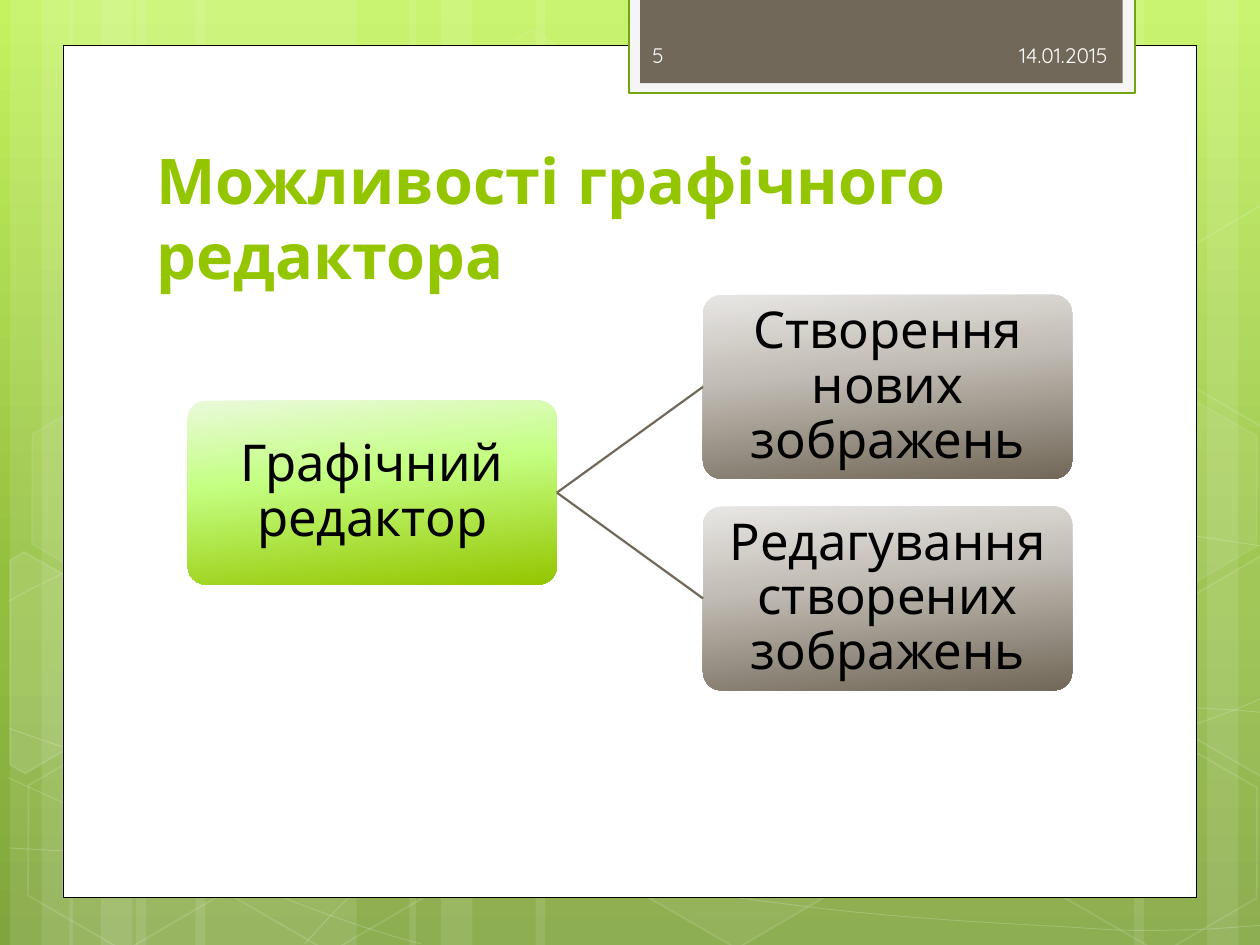
from lxml.etree import SubElement
from pptx import Presentation
from pptx.dml.color import RGBColor as RGB
from pptx.enum.shapes import MSO_CONNECTOR as Link, MSO_SHAPE as Shape
from pptx.enum.text import MSO_ANCHOR as Anchor, PP_ALIGN as Align
from pptx.oxml.ns import qn
from pptx.util import Inches, Pt

WIDE, HIGH = 10, 7.5
FONT = "Quicksand"
WHITE, BLACK = RGB(255, 255, 255), RGB(0, 0, 0)
LIME, GREEN = RGB(0x94, 0xC6, 0x00), RGB(0x74, 0xA5, 0x10)
BROWN, PALE = RGB(0x71, 0x68, 0x5A), RGB(0xF5, 0xF5, 0xF5)
LIGHT = RGB(0xFE, 0xFE, 0xFE)
BACK = [(0, RGB(0xC3, 0xF3, 0x5F)), (62, RGB(0x93, 0xBF, 0x3F)),
        (100, RGB(0x81, 0xA5, 0x3E))]
FRESH = [(0, RGB(0xEA, 0xF9, 0xDA)), (40, RGB(0xC4, 0xFF, 0x82)), (100, LIME)]
EARTH = [(0, RGB(0xE8, 0xE6, 0xE4)), (40, RGB(0xC2, 0xBD, 0xB5)),
         (100, RGB(0x72, 0x68, 0x59))]

TITLE = "Можливості графічного редактора"
ROOT = "Графічний редактор"
LEAVES = ["Створення нових зображень", "Редагування створених зображень"]
# text, left, width, alignment
MARKS = [("14.01.2015", 6.56, 2.33, Align.RIGHT), ("5", 5.08, 1.46, Align.LEFT)]

# left, width
STRIPES = [(1.08, 1.75), (0.08, 0.5), (0.33, 0.83), (1.55, 1.75), (0.55, 0.5),
           (0.8, 0.83), (7.33, 1.75), (9.58, 0.5), (9, 0.83), (4.25, 3.08),
           (3.25, 0.5), (3.5, 0.83)]
# start point, then Bezier triples
WAVES = [
    [(0.07, 6.73), (0.61, 6.76), (1.15, 6.79), (1.9, 6.78), (2.65, 6.77),
     (3.58, 6.75), (4.58, 6.65), (5.58, 6.55), (7, 6.36), (7.92, 6.17),
     (8.83, 5.98), (9.77, 5.68), (10.07, 5.51)],
    [(0.07, 4.77), (0.36, 4.61), (0.65, 4.46), (1.21, 4.31), (1.78, 4.16),
     (2.59, 3.94), (3.47, 3.87), (4.36, 3.8), (5.44, 3.79), (6.54, 3.87),
     (7.64, 3.95), (9.47, 4.26), (10.07, 4.34)],
    [(0.06, 6.17), (1.27, 6.72), (2.47, 7.27), (3.34, 7.49)],
    [(0.07, 5.78), (0.38, 5.89), (0.7, 6), (1.28, 6.16), (1.86, 6.31),
     (2.73, 6.56), (3.57, 6.73), (4.4, 6.9), (5.45, 7.08), (6.28, 7.18),
     (7.11, 7.29), (8, 7.33), (8.53, 7.36), (9.05, 7.4), (9.19, 7.38),
     (9.45, 7.38), (9.71, 7.37), (9.89, 7.35), (10.07, 7.34)],
    [(2.42, 7.49), (2.6, 7.29), (2.78, 7.09), (3.02, 6.91), (3.26, 6.73),
     (3.6, 6.53), (3.88, 6.39), (4.16, 6.25), (4.33, 6.19), (4.7, 6.09),
     (5.06, 5.99), (5.73, 5.85), (6.08, 5.78), (6.44, 5.71), (6.49, 5.71),
     (6.8, 5.69), (7.11, 5.66), (7.6, 5.63), (7.94, 5.62), (8.29, 5.61),
     (8.86, 5.62), (8.86, 5.62), (9.08, 5.62), (9.31, 5.62), (9.53, 5.62),
     (9.71, 5.63), (9.88, 5.64), (9.97, 5.65), (10.06, 5.66), (10.03, 5.65),
     (10.06, 5.66)],
]
# left, top, fill opacity, line opacity
CELLS = [(3.34, 0.36, 4, 8), (4.97, 5.89, 6, 12), (0.11, 5.91, 0, 12),
         (0.14, 3.12, 7, 8), (1.74, 5.92, 0, 12), (7.53, 4.53, 10, 12),
         (8.34, 5.93, 0, 12), (8.34, 3.14, 7, 8)]
# corners, fill opacity
SHARDS = [
    ([(0.08, 4.45), (0.19, 4.38), (0.96, 4.82), (0.95, 5.7), (0.2, 6.14),
      (0.08, 6.07)], 10),
    ([(9.26, 4.85), (10.01, 4.41), (10.09, 4.46), (10.09, 6.13),
      (10.02, 6.17), (9.26, 5.73)], 4),
    ([(9.26, 2.07), (10.01, 1.63), (10.1, 1.68), (10.09, 3.35),
      (10.02, 3.39), (9.26, 2.95)], 0),
]
# box, fill, line, line width
FRAMES = [((0.5, 0.36, 9, 6.76), WHITE, BLACK, 0.5),
          ((4.99, -0.02, 4.02, 0.76), PALE, GREEN, 1.25),
          ((5.08, -0.02, 3.83, 0.68), BROWN, None, 0)]

NODE_W, NODE_H, PAD = 2.93, 1.46, 0.04
COLS = (1.49, 5.58)
TOP, STEP = 2.34, 1.68

deck = Presentation()
deck.slide_width, deck.slide_height = Inches(WIDE), Inches(HIGH)
slide = deck.slides.add_slide(deck.slide_layouts[5])
shapes = slide.shapes


def veil(shape, alpha, edge, width=1):
    """Give a shape a white fill and line at opacities in percent; 0 is none."""
    shape.shadow.inherit = False
    shape.line.width = Pt(width)
    for fill, part in ((shape.fill, alpha), (shape.line.fill, edge)):
        if part:
            fill.solid()
            fill.fore_color.rgb = WHITE
        else:
            fill.background()
    tones = shape.element.spPr.iter(qn("a:srgbClr"))
    for tone, part in zip(tones, filter(None, (alpha, edge))):
        SubElement(tone, qn("a:alpha"), val=str(part * 1000))


def blend(fill, root, stops, angle):
    """Set gradient stops; the angle runs clockwise."""
    fill.gradient()
    fill.gradient_angle = 360 - angle
    ramp = next(root.iter(qn("a:gsLst")))
    for old in list(ramp):
        ramp.remove(old)
    for pos, tone in stops:
        stop = SubElement(ramp, qn("a:gs"), pos=str(pos * 1000))
        SubElement(stop, qn("a:srgbClr"), val=str(tone))


def add(kind, box):
    shape = shapes.add_shape(kind, *map(Inches, box))
    shape.shadow.inherit = False
    return shape


def trace(points, close):
    spots = [(Inches(x), Inches(y)) for x, y in points]
    pen = shapes.build_freeform(*spots[0])
    pen.add_line_segments(spots[1:], close=close)
    return pen.convert_to_shape()


def curve(points):
    """Draw a chain of cubic Bezier curves."""
    shape = trace(points, False)
    track = next(shape.element.iter(qn("a:path")))
    lines = track.findall(qn("a:lnTo"))
    for i in range(0, len(lines), 3):
        bend = SubElement(track, qn("a:cubicBezTo"))
        for line in lines[i:i + 3]:
            bend.append(line[0])
            track.remove(line)
    return shape


def write(shape, text, size, color, align, anchor, bold=False, inset=None):
    frame = shape.text_frame
    frame.word_wrap, frame.vertical_anchor = True, anchor
    if inset is not None:
        for side in ("left", "top", "right", "bottom"):
            setattr(frame, "margin_" + side, Inches(inset))
    line = frame.paragraphs[0]
    line.alignment = align
    run = line.add_run()
    run.text = text
    run.font.color.rgb = color
    for key, val in {"name": FONT, "size": Pt(size), "bold": bold}.items():
        setattr(run.font, key, val)
    return line


def node(text, col, row, stops):
    left, top = COLS[col], TOP + row * STEP
    box = add(Shape.ROUNDED_RECTANGLE, (left, top, NODE_W, NODE_H))
    box.adjustments[0] = 0.1
    box.line.fill.background()
    blend(box.fill, box.element, stops, 84)
    label = shapes.add_textbox(*map(Inches, (
        left + PAD, top + PAD, NODE_W - 2 * PAD, NODE_H - 2 * PAD)))
    line = write(label, text, 29, BLACK, Align.CENTER, Anchor.MIDDLE, inset=0.02)
    line.line_spacing = 0.9
    return box


blend(slide.background.fill, slide.element, BACK, 90)
for left, width in STRIPES:
    veil(add(Shape.RECTANGLE, (left, 0, width, HIGH)), 10, 0)
for wave in WAVES:
    veil(curve(wave), 0, 20, 0.5)
for left, top, alpha, edge in CELLS:
    cell = add(Shape.HEXAGON, (left, top, 1.75, 1.52))
    cell.rotation = 30
    cell.adjustments[0], cell.adjustments[1] = 0.285, 1.155
    veil(cell, alpha, edge)
for points, alpha in SHARDS:
    veil(trace(points, True), alpha, 12)

for box, tone, edge, width in FRAMES:
    panel = add(Shape.RECTANGLE, box)
    panel.fill.solid()
    panel.fill.fore_color.rgb = tone
    if edge is None:
        panel.line.fill.background()
    else:
        panel.line.color.rgb, panel.line.width = edge, Pt(width)

title = shapes.title
shapes.element.append(title.element)
for key, val in zip(("left", "top", "width", "height"), (1.14, 1.12, 7.68, 1.25)):
    setattr(title, key, Inches(val))
write(title, TITLE, 36, LIME, Align.LEFT, Anchor.BOTTOM, bold=True)

root = node(ROOT, 0, (len(LEAVES) - 1) / 2, FRESH)
for row, text in enumerate(LEAVES):
    leaf = node(text, 1, row, EARTH)
    link = shapes.add_connector(Link.STRAIGHT, 0, 0, 0, 0)
    link.begin_connect(root, 3)
    link.end_connect(leaf, 1)
    link.line.color.rgb, link.line.width = BROWN, Pt(1.25)
    SubElement(link.element.spPr, qn("a:effectLst"))

for text, left, width, align in MARKS:
    mark = shapes.add_textbox(*map(Inches, (left, 0.24, width, 0.4)))
    write(mark, text, 12, LIGHT, align, Anchor.MIDDLE)

deck.save("out.pptx")
